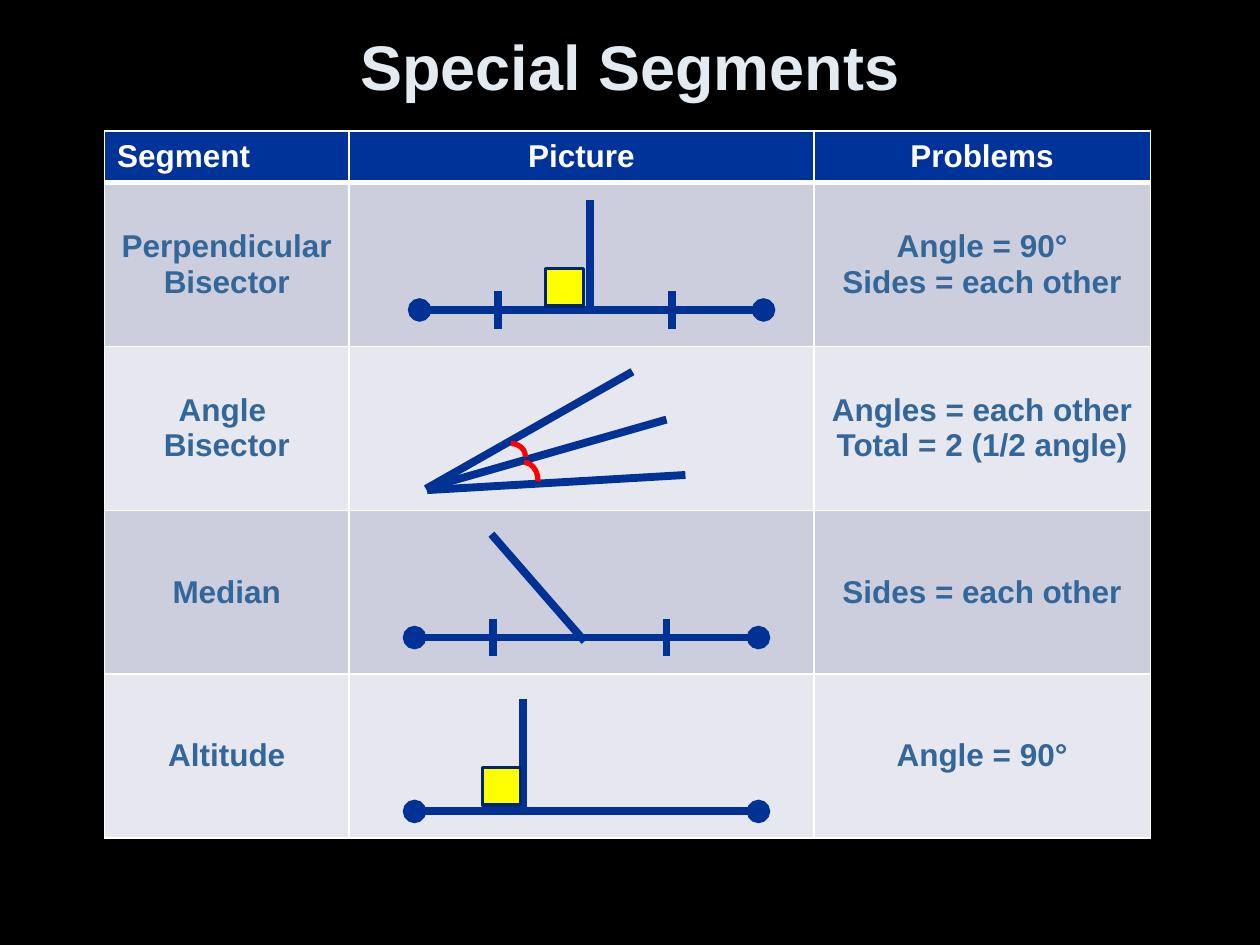
from lxml import etree
from pptx import Presentation
from pptx.dml.color import RGBColor
from pptx.enum.shapes import MSO_CONNECTOR, MSO_SHAPE
from pptx.enum.text import MSO_ANCHOR, PP_ALIGN
from pptx.oxml.ns import qn
from pptx.util import Inches, Pt

STRAIGHT = MSO_CONNECTOR.STRAIGHT
RECTANGLE, ARC = MSO_SHAPE.RECTANGLE, MSO_SHAPE.ARC
LEFT, CENTER = PP_ALIGN.LEFT, PP_ALIGN.CENTER
MIDDLE = MSO_ANCHOR.MIDDLE

COLORS = {
    "background": "000000", "title": "E3EBF1", "header": "003399",
    "header_text": "FFFFFF", "body_text": "336699", "border": "FFFFFF",
    "dark_band": "CCCEDE", "light_band": "E7E8EF", "segment": "003296",
    "square": "FFFF00", "square_edge": "002671", "arc": "FF0000",
}
FONT = "Arial"
GRID_COLUMNS = 100  # square grid cells: 100 across, 75 down

# Each cell is a list of paragraphs; "\n" is a line break inside a paragraph.
ROWS = [
    (["Segment"], ["Picture"], ["Problems"]),
    (["Perpendicular\nBisector"], [], ["Angle = 90°", "Sides = each other"]),
    (["Angle \nBisector"], [], ["Angles = each other", "Total = 2 (1/2 angle)"]),
    (["Median"], [], ["Sides = each other"]),
    (["Altitude"], [], ["Angle = 90°"]),
]
COLUMN_WIDTHS = [19.4, 36.9, 26.7]
HEADER_HEIGHT, BODY_HEIGHT = 4.1, 13

SEGMENT_LENGTH = 27.3
TICK_OFFSETS = (6.2, 20)
TICK_REACH = 1.5
SQUARE_SIZE = 3
PERPENDICULAR_HEIGHT = 9


def color(name):
    return RGBColor.from_string(COLORS[name])


class SlideBuilder:
    def __init__(self, presentation):
        self.unit = presentation.slide_width / GRID_COLUMNS
        self.slide = presentation.slides.add_slide(presentation.slide_layouts[6])
        self.canvas = self.slide.shapes
        fill = self.slide.background.fill
        fill.solid()
        fill.fore_color.rgb = color("background")

    def grid(self, *lengths):
        return [round(length * self.unit) for length in lengths]

    def start_drawing(self):
        """Collect the shapes that follow in a new group."""
        self.canvas = self.slide.shapes.add_group_shape().shapes

    def add_text(self, frame, paragraphs, size, color_name, alignment=CENTER):
        for index, text in enumerate(paragraphs):
            paragraph = frame.add_paragraph() if index else frame.paragraphs[0]
            paragraph.alignment = alignment
            for number, line in enumerate(text.split("\n")):
                if number:
                    paragraph.add_line_break()
                run = paragraph.add_run()
                run.text = line
                run.font.name = FONT
                run.font.size = Pt(size)
                run.font.bold = True
                run.font.color.rgb = color(color_name)

    def title(self, text, left, top, width, height):
        box = self.slide.shapes.add_textbox(*self.grid(left, top, width, height))
        frame = box.text_frame
        frame.word_wrap = True
        frame.vertical_anchor = MIDDLE
        self.add_text(frame, [text], 36, "title")

    def border(self, cell, top, bottom):
        """Draw the cell's four edges; must come before the cell's fill."""
        properties = cell._tc.get_or_add_tcPr()
        for edge, width in (("L", 1), ("R", 1), ("T", top), ("B", bottom)):
            line = etree.SubElement(properties, qn(f"a:ln{edge}"), w=str(Pt(width)))
            fill = etree.SubElement(line, qn("a:solidFill"))
            etree.SubElement(fill, qn("a:srgbClr"), val=COLORS["border"])

    def table(self, left, top):
        heights = [HEADER_HEIGHT] + [BODY_HEIGHT] * (len(ROWS) - 1)
        table = self.slide.shapes.add_table(
            len(ROWS), len(COLUMN_WIDTHS),
            *self.grid(left, top, sum(COLUMN_WIDTHS), sum(heights))).table
        table.first_row = table.horz_banding = False
        for column, width in zip(table.columns, self.grid(*COLUMN_WIDTHS)):
            column.width = width
        for row, height in zip(table.rows, self.grid(*heights)):
            row.height = height
        for row_index, row in enumerate(ROWS):
            is_header = row_index == 0
            band = "dark_band" if row_index % 2 else "light_band"
            for column_index, paragraphs in enumerate(row):
                cell = table.cell(row_index, column_index)
                cell.vertical_anchor = MIDDLE
                self.border(cell, 3 if row_index == 1 else 1, 3 if is_header else 1)
                cell.fill.solid()
                cell.fill.fore_color.rgb = color("header" if is_header else band)
                self.add_text(cell.text_frame, paragraphs, 18,
                              "header_text" if is_header else "body_text",
                              LEFT if is_header and column_index == 0 else CENTER)

    def line(self, x1, y1, x2, y2, dots=False):
        connector = self.canvas.add_connector(STRAIGHT, *self.grid(x1, y1, x2, y2))
        connector.line.color.rgb = color("segment")
        connector.line.width = Pt(4.5)
        properties = connector._element.spPr
        if dots:
            for end in ("a:headEnd", "a:tailEnd"):
                etree.SubElement(properties.find(qn("a:ln")), qn(end), type="oval")
        etree.SubElement(properties, qn("a:effectLst"))

    def shape(self, kind, left, top, width, height, line_name, line_width):
        shape = self.canvas.add_shape(kind, *self.grid(left, top, width, height))
        shape.shadow.inherit = False
        shape.line.color.rgb = color(line_name)
        shape.line.width = Pt(line_width)
        return shape

    def base(self, left, y, ticks):
        self.line(left, y, left + SEGMENT_LENGTH, y, dots=True)
        if ticks:
            for offset in TICK_OFFSETS:
                x = left + offset
                self.line(x, y - TICK_REACH, x, y + TICK_REACH)

    def perpendicular(self, x, top, square_left):
        self.line(x, top, x, top + PERPENDICULAR_HEIGHT)
        square = self.shape(RECTANGLE, square_left, top + 5.4,
                            SQUARE_SIZE, SQUARE_SIZE, "square_edge", 2)
        square.fill.solid()
        square.fill.fore_color.rgb = color("square")

    def angle_arc(self, left, top, width, height):
        arc = self.shape(ARC, left, top, width, height, "arc", 3)
        arc.fill.background()
        arc.adjustments[0] = 162
        arc.adjustments[1] = 1.64


def main():
    presentation = Presentation()
    presentation.slide_width, presentation.slide_height = Inches(10), Inches(7.5)
    builder = SlideBuilder(presentation)
    builder.title("Special Segments", 5, 0.5, 90, 9.4)
    builder.table(8.3, 10.4)

    builder.start_drawing()  # perpendicular bisector
    builder.base(33.3, 24.6, ticks=True)
    builder.perpendicular(46.8, 15.9, square_left=43.3)

    builder.start_drawing()  # altitude
    builder.base(32.9, 64.4, ticks=False)
    builder.perpendicular(41.5, 55.5, square_left=38.3)

    builder.start_drawing()  # median
    builder.base(32.9, 50.6, ticks=True)
    builder.line(39, 42.4, 46.4, 50.9)

    builder.start_drawing()  # angle bisector
    for ray in ((50.2, 29.5, 33.8, 38.8), (54.4, 37.7, 33.9, 38.9),
                (52.9, 33.3, 34, 38.7)):
        builder.line(*ray)
    builder.angle_arc(39.4, 35.2, 2.3, 2)
    builder.angle_arc(40.5, 36.7, 2.2, 2.9)

    presentation.save("out.pptx")


if __name__ == "__main__":
    main()
